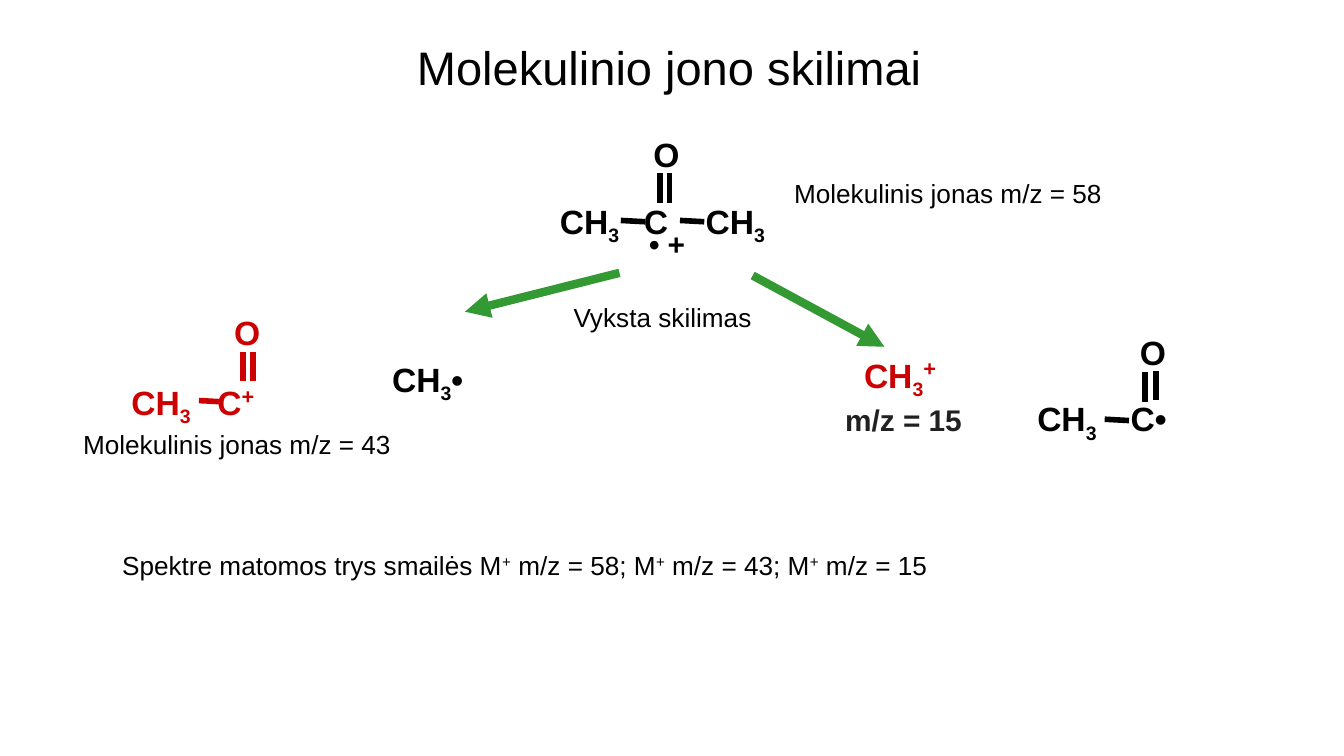
from typing import NamedTuple

from lxml.etree import SubElement
from pptx import Presentation
from pptx.dml.color import RGBColor
from pptx.enum.shapes import MSO_CONNECTOR as Connector
from pptx.enum.text import MSO_ANCHOR as Anchor, PP_ALIGN as Align
from pptx.oxml.ns import qn
from pptx.util import Pt

BLACK = RGBColor(0x00, 0x00, 0x00)
CHARCOAL = RGBColor(0x21, 0x21, 0x21)
RED = RGBColor(0xCC, 0x00, 0x00)
GREEN = RGBColor(0x33, 0x99, 0x33)
FONT = "Arial"
SINGLE_BOND = (13, 0.7)
DOUBLE_BOND = (0, 15.8)


class Part(NamedTuple):
    text: str
    baseline: int = 0
    size: float | None = None


class Label(NamedTuple):
    left: float
    top: float
    width: float
    height: float
    lines: list[list[Part]]
    size: float = 14
    color: RGBColor = BLACK
    bold: bool = False
    tabs: tuple[tuple[float, ...], ...] = ()


class Bond(NamedTuple):
    x: float
    y: float
    span: tuple[float, float]
    color: RGBColor = BLACK


class Arrow(NamedTuple):
    x1: float
    y1: float
    x2: float
    y2: float


SUB_3 = Part("3", -25)
CHARGE = Part("+", 30, 20)
ION_CHARGE = Part("+", 30)
METHYL = [Part("CH"), SUB_3]
OXYGEN = [Part("\tO")]

TITLE = Label(23, 13, 671, 45.4, [[Part("Molekulinio jono skilimai")]], 25.2)

LABELS = [
    Label(277.9, 68.4, 151.2, 66.2,
          [OXYGEN, [Part("\tCH"), SUB_3, Part("\tC\tCH"), SUB_3]],
          18, BLACK, True, ((65,), (15, 60, 93))),
    Label(58.3, 163.4, 100.1, 66.2,
          [OXYGEN, [Part("\tCH"), SUB_3, Part("\tC"), CHARGE]],
          18, RED, True, ((60,), (5, 51))),
    Label(548.6, 174.2, 109.4, 66.2,
          [OXYGEN, METHYL + [Part("\tC•")]],
          18, BLACK, True, ((55,), (50,))),
    Label(203, 188.6, 69.1, 29.5, [METHYL + [Part("•")]], 18, BLACK, True),
    Label(455.8, 184.3, 69.1, 29.5, [METHYL + [CHARGE]], 18, RED, True),
    Label(445.7, 211.7, 107.3, 27.4, [[Part("m/z = 15")]], 16, CHARCOAL, True),
    Label(340.6, 117.4, 34.6, 20.9, [[Part("• +")]], 16, BLACK, True),
    Label(418.3, 91.4, 180, 24.5, [[Part("Molekulinis jonas m/z = 58")]]),
    Label(300.2, 157.7, 115.2, 24.5, [[Part("Vyksta skilimas")]]),
    Label(37.4, 226.1, 187.9, 24.5, [[Part("Molekulinis jonas m/z = 43")]]),
    Label(58.3, 290.9, 483.1, 24.5,
          [[Part("Spektre matomos trys smailės M"), ION_CHARGE,
            Part(" m/z = 58; M"), ION_CHARGE,
            Part(" m/z = 43; M"), ION_CHARGE, Part(" m/z = 15")]]),
]

BONDS = [
    Bond(332.6, 118.1, SINGLE_BOND),
    Bond(364.3, 118.1, SINGLE_BOND),
    Bond(353.5, 92.9, DOUBLE_BOND),
    Bond(358.6, 92.9, DOUBLE_BOND),
    Bond(106.6, 214.6, SINGLE_BOND, RED),
    Bond(130.3, 188.6, DOUBLE_BOND, RED),
    Bond(135.4, 188.6, DOUBLE_BOND, RED),
    Bond(591.8, 224.6, SINGLE_BOND),
    Bond(613.4, 199.4, DOUBLE_BOND),
    Bond(619.2, 198.7, DOUBLE_BOND),
]

ARROWS = [Arrow(331.9, 146.2, 249.1, 167), Arrow(403.2, 147.6, 473.8, 185.8)]


def add_label(slide, label: Label):
    box = slide.shapes.add_textbox(
        Pt(label.left), Pt(label.top), Pt(label.width), Pt(label.height))
    frame = box.text_frame
    frame.word_wrap = True
    for index, parts in enumerate(label.lines):
        paragraph = frame.add_paragraph() if index else frame.paragraphs[0]
        if index:
            paragraph.space_before = Pt(14)
        if label.tabs:
            stops = SubElement(paragraph._p.get_or_add_pPr(), qn("a:tabLst"))
            for position in label.tabs[index]:
                SubElement(stops, qn("a:tab"), pos=str(Pt(position)), algn="l")
        for part in parts:
            run = paragraph.add_run()
            run.text = part.text
            run.font.name = FONT
            run.font.size = Pt(part.size or label.size)
            run.font.bold = label.bold
            run.font.color.rgb = label.color
            if part.baseline:
                run._r.get_or_add_rPr().set("baseline", str(part.baseline * 1000))
    return frame


def add_line(slide, start: tuple[float, float], end: tuple[float, float],
             color: RGBColor, width: float):
    line = slide.shapes.add_connector(
        Connector.STRAIGHT, Pt(start[0]), Pt(start[1]), Pt(end[0]), Pt(end[1]))
    line.line.color.rgb = color
    line.line.width = Pt(width)
    SubElement(line._element.spPr, qn("a:effectLst"))
    return line


def add_bond(slide, bond: Bond) -> None:
    end = (bond.x + bond.span[0], bond.y + bond.span[1])
    add_line(slide, (bond.x, bond.y), end, bond.color, 3)


def add_arrow(slide, arrow: Arrow) -> None:
    line = add_line(slide, (arrow.x1, arrow.y1), (arrow.x2, arrow.y2), GREEN, 4.5)
    SubElement(line.line._get_or_add_ln(), qn("a:tailEnd"), type="triangle")


def main() -> None:
    deck = Presentation()
    deck.slide_width, deck.slide_height = Pt(720), Pt(405)
    slide = deck.slides.add_slide(deck.slide_layouts[6])
    title = add_label(slide, TITLE)
    title.vertical_anchor = Anchor.MIDDLE
    title.paragraphs[0].alignment = Align.CENTER
    for arrow in ARROWS:
        add_arrow(slide, arrow)
    for label in LABELS:
        add_label(slide, label)
    for bond in BONDS:
        add_bond(slide, bond)
    deck.save("out.pptx")


if __name__ == "__main__":
    main()
